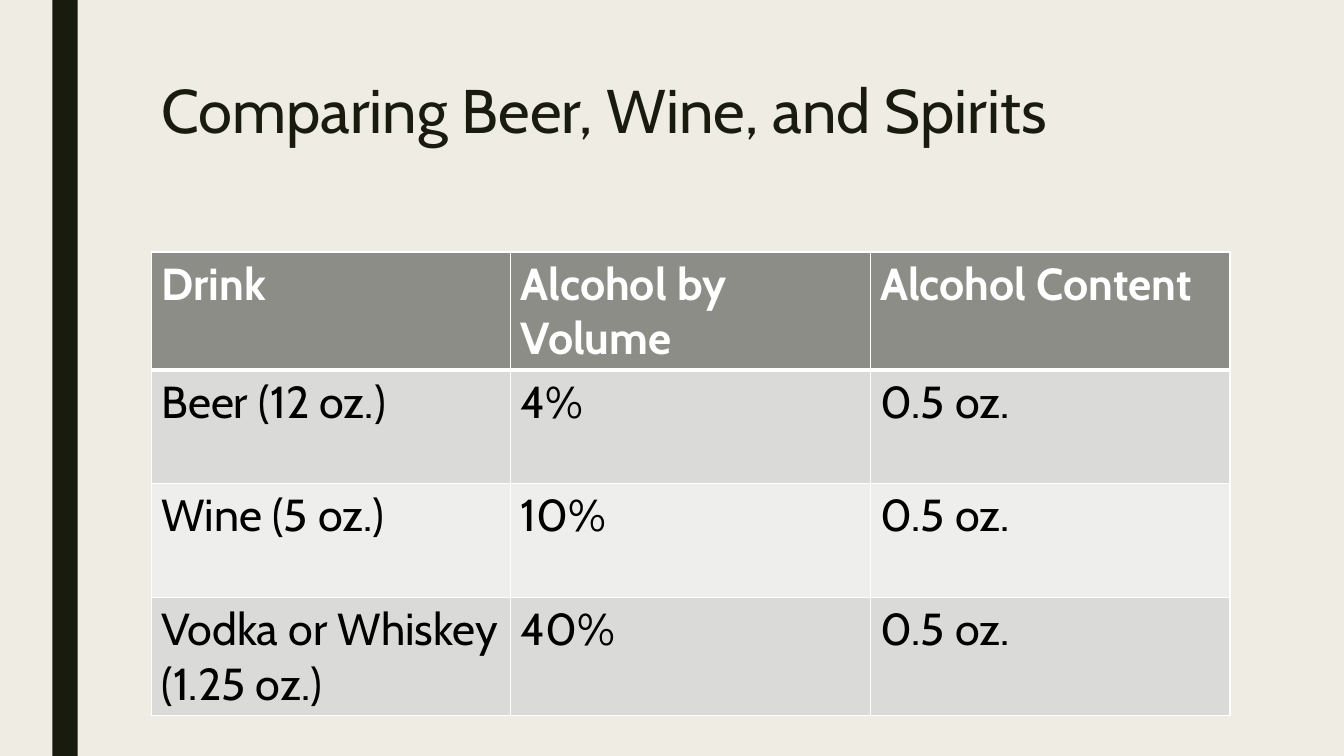
from dataclasses import dataclass

from lxml.etree import SubElement
from pptx import Presentation
from pptx.dml.color import RGBColor
from pptx.enum.shapes import MSO_SHAPE as Preset
from pptx.oxml.ns import qn
from pptx.slide import Slide
from pptx.table import _Cell as Cell
from pptx.text.text import TextFrame
from pptx.util import Inches, Pt

FONT = "Cabin"
CREAM = RGBColor(0xEF, 0xED, 0xE3)
INK = RGBColor(0x19, 0x1B, 0x0E)
WHITE = RGBColor(0xFF, 0xFF, 0xFF)
BLACK = RGBColor(0x00, 0x00, 0x00)
HEADER_GREY = RGBColor(0x8C, 0x8D, 0x86)
DARK_BAND = RGBColor(0xDA, 0xDB, 0xD9)
LIGHT_BAND = RGBColor(0xEE, 0xEE, 0xED)


@dataclass(frozen=True)
class DrinkRow:
    texts: tuple[str, str, str]
    fill: RGBColor
    height: float = 1.13
    color: RGBColor = BLACK
    bold: bool = False
    top_line: float = 1
    bottom_line: float = 1


ROWS = (
    DrinkRow(("Drink", "Alcohol by Volume", "Alcohol Content"), HEADER_GREY,
             height=1.16, color=WHITE, bold=True, bottom_line=3),
    DrinkRow(("Beer (12 oz.)", "4%", "0.5 oz."), DARK_BAND, top_line=3),
    DrinkRow(("Wine (5 oz.)", "10%", "0.5 oz."), LIGHT_BAND),
    DrinkRow(("Vodka or Whiskey (1.25 oz.)", "40%", "0.5 oz."), DARK_BAND),
)


def write(frame: TextFrame, text: str, size: float, color: RGBColor,
          bold: bool = False) -> None:
    frame.text = text
    font = frame.paragraphs[0].runs[0].font
    font.name, font.size, font.bold = FONT, Pt(size), bold
    font.color.rgb = color


def add_borders(cell: Cell, top: float, bottom: float) -> None:
    properties = cell._tc.get_or_add_tcPr()
    for side, width in (("L", 1), ("R", 1), ("T", top), ("B", bottom)):
        line = SubElement(properties, qn(f"a:ln{side}"), w=str(Pt(width)))
        fill = SubElement(line, qn("a:solidFill"))
        SubElement(fill, qn("a:srgbClr"), val=str(WHITE))


def add_side_bar(page: Slide) -> None:
    bar = page.shapes.add_shape(Preset.RECTANGLE, Inches(0.52), 0,
                                Inches(0.25), Inches(7.5))
    bar.shadow.inherit = False
    bar.fill.solid()
    bar.fill.fore_color.rgb = INK
    bar.line.fill.background()


def add_title(page: Slide) -> None:
    box = page.shapes.add_textbox(Inches(1.5), Inches(0.75),
                                  Inches(10.5), Inches(1.62))
    box.text_frame.word_wrap = True
    write(box.text_frame, "Comparing Beer, Wine, and Spirits", 44, INK)
    box.text_frame.paragraphs[0].line_spacing = 0.89


def add_drink_table(page: Slide) -> None:
    height = sum(row.height for row in ROWS)
    table = page.shapes.add_table(len(ROWS), 3, Inches(1.5), Inches(2.5),
                                  Inches(10.7), Inches(height)).table
    for row_index, row in enumerate(ROWS):
        table.rows[row_index].height = Inches(row.height)
        for column_index, text in enumerate(row.texts):
            cell = table.cell(row_index, column_index)
            add_borders(cell, row.top_line, row.bottom_line)
            cell.fill.solid()
            cell.fill.fore_color.rgb = row.fill
            write(cell.text_frame, text, 32, row.color, row.bold)


def main() -> None:
    deck = Presentation()
    deck.slide_width, deck.slide_height = Inches(13.33), Inches(7.5)
    page = deck.slides.add_slide(deck.slide_layouts[6])
    page.background.fill.solid()
    page.background.fill.fore_color.rgb = CREAM

    # Frame and heading
    add_side_bar(page)
    add_title(page)

    # Comparison of drinks
    add_drink_table(page)
    deck.save("out.pptx")


if __name__ == "__main__":
    main()
